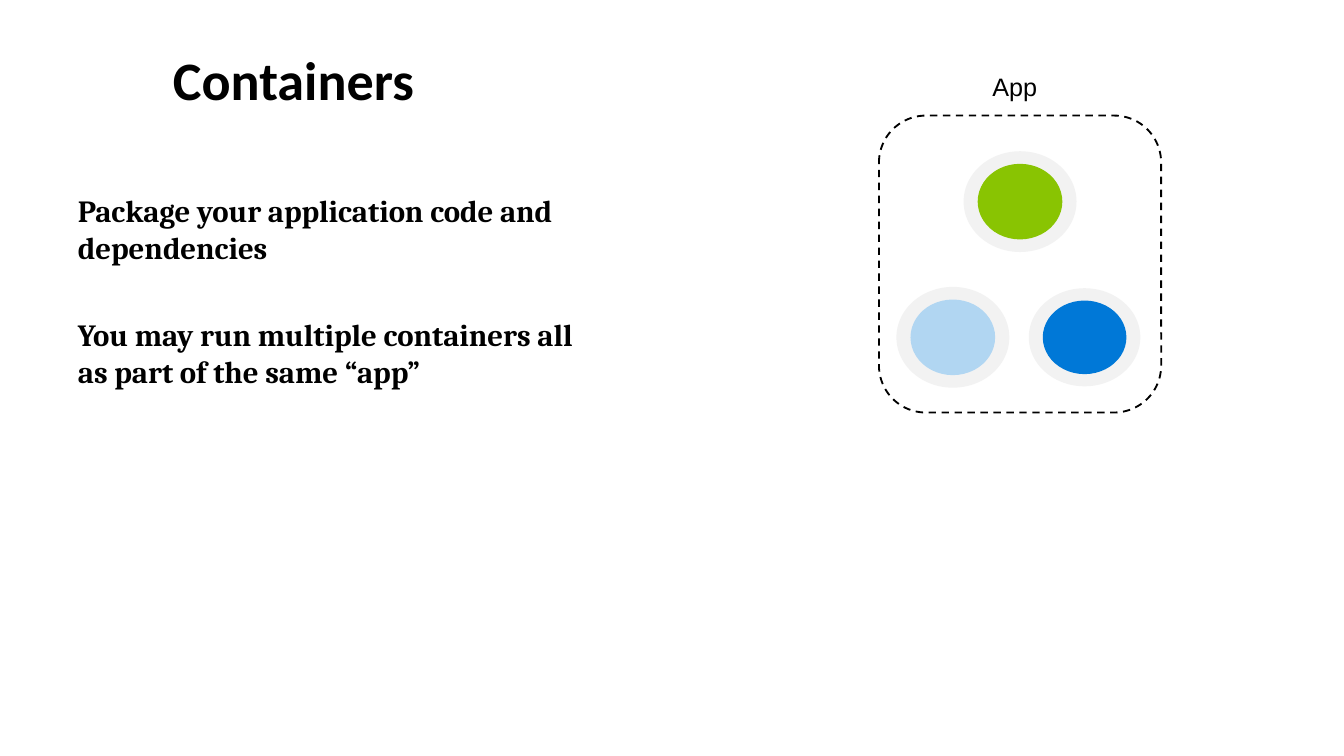
from pptx import Presentation
from pptx.dml.color import RGBColor
from pptx.enum.dml import MSO_LINE_DASH_STYLE as Dash
from pptx.enum.shapes import MSO_SHAPE as Shape
from pptx.enum.text import MSO_ANCHOR as Anchor, MSO_AUTO_SIZE as AutoSize, PP_ALIGN as Align
from pptx.util import Inches, Pt

BLACK = RGBColor(0x00, 0x00, 0x00)
WHITE = RGBColor(0xFF, 0xFF, 0xFF)
RING_GRAY = RGBColor(0xF2, 0xF2, 0xF2)
GREEN = RGBColor(0x89, 0xC4, 0x02)
LIGHT_BLUE = RGBColor(0xB1, 0xD6, 0xF2)
BLUE = RGBColor(0x00, 0x78, 0xD7)

CORE_RATIO = 0.75
CONTAINERS = [
    (7.59, 1.5, 0.84, 0.75, GREEN),
    (7.09, 2.51, 0.84, 0.75, LIGHT_BLUE),
    (8.07, 2.51, 0.83, 0.73, BLUE),
]
POINTS = [
    "Package your application code and dependencies",
    "You may run multiple containers all as part of the same “app”",
]


def place(shape, left, top, width, height):
    shape.left, shape.top = Inches(left), Inches(top)
    shape.width, shape.height = Inches(width), Inches(height)


def write_text(paragraph, text, *, font, size, bold=False, align=Align.LEFT,
               space_before=0, line_spacing=1.0):
    paragraph.alignment = align
    paragraph.space_before = Pt(space_before)
    paragraph.line_spacing = line_spacing
    run = paragraph.add_run()
    run.text = text
    run.font.name = font
    run.font.size = Pt(size)
    run.font.bold = bold
    run.font.color.rgb = BLACK


def remove_bullet(paragraph):
    properties = paragraph._p.get_or_add_pPr()
    properties.set("marL", "0")
    properties.set("indent", "0")
    properties.append(properties.makeelement(
        "{http://schemas.openxmlformats.org/drawingml/2006/main}buNone"))


def add_title(slide):
    title = slide.shapes.title
    place(title, 0.48, 0.43, 3.41, 0.45)
    frame = title.text_frame
    frame.auto_size = AutoSize.NONE
    frame.vertical_anchor = Anchor.BOTTOM
    frame.margin_bottom = Inches(0.05)
    write_text(frame.paragraphs[0], "Containers", font="Calibri", size=29,
               bold=True, align=Align.CENTER)


def add_points(slide):
    body = slide.placeholders[1]
    place(body, 0.48, 1.38, 4.1, 1.83)
    frame = body.text_frame
    frame.auto_size = AutoSize.NONE
    for index, text in enumerate(POINTS):
        paragraph = frame.add_paragraph() if index else frame.paragraphs[0]
        write_text(paragraph, text, font="Cambria", size=16.5, bold=True,
                   space_before=26.4 if index else 0)
        remove_bullet(paragraph)


def add_app_label(slide):
    label = slide.shapes.add_textbox(Inches(6.61), Inches(0.51), Inches(1.88), Inches(0.31))
    frame = label.text_frame
    frame.word_wrap = True
    frame.auto_size = AutoSize.SHAPE_TO_FIT_TEXT
    write_text(frame.paragraphs[0], "App", font="Arial", size=13.5,
               align=Align.CENTER, line_spacing=0.9)


def add_filled_shape(shapes, kind, left, top, width, height, color):
    shape = shapes.add_shape(kind, Inches(left), Inches(top), Inches(width), Inches(height))
    shape.shadow.inherit = False
    shape.fill.solid()
    shape.fill.fore_color.rgb = color
    shape.line.fill.background()
    return shape


def add_app_boundary(slide):
    boundary = add_filled_shape(slide.shapes, Shape.ROUNDED_RECTANGLE,
                                6.54, 0.86, 2.1, 2.21, WHITE)
    boundary.line.color.rgb = BLACK
    boundary.line.width = Pt(1)
    boundary.line.dash_style = Dash.DASH


def add_container(slide, center_x, center_y, width, height, color):
    group = slide.shapes.add_group_shape()
    for ratio, fill in ((1, RING_GRAY), (CORE_RATIO, color)):
        add_filled_shape(group.shapes, Shape.OVAL,
                         center_x - width * ratio / 2, center_y - height * ratio / 2,
                         width * ratio, height * ratio, fill)


def main():
    presentation = Presentation()
    presentation.slide_width = Inches(10)
    presentation.slide_height = Inches(10 * 9 / 16)
    slide = presentation.slides.add_slide(presentation.slide_layouts[1])
    add_title(slide)
    add_points(slide)
    add_app_label(slide)
    add_app_boundary(slide)
    for container in CONTAINERS:
        add_container(slide, *container)
    presentation.save("out.pptx")


if __name__ == "__main__":
    main()
